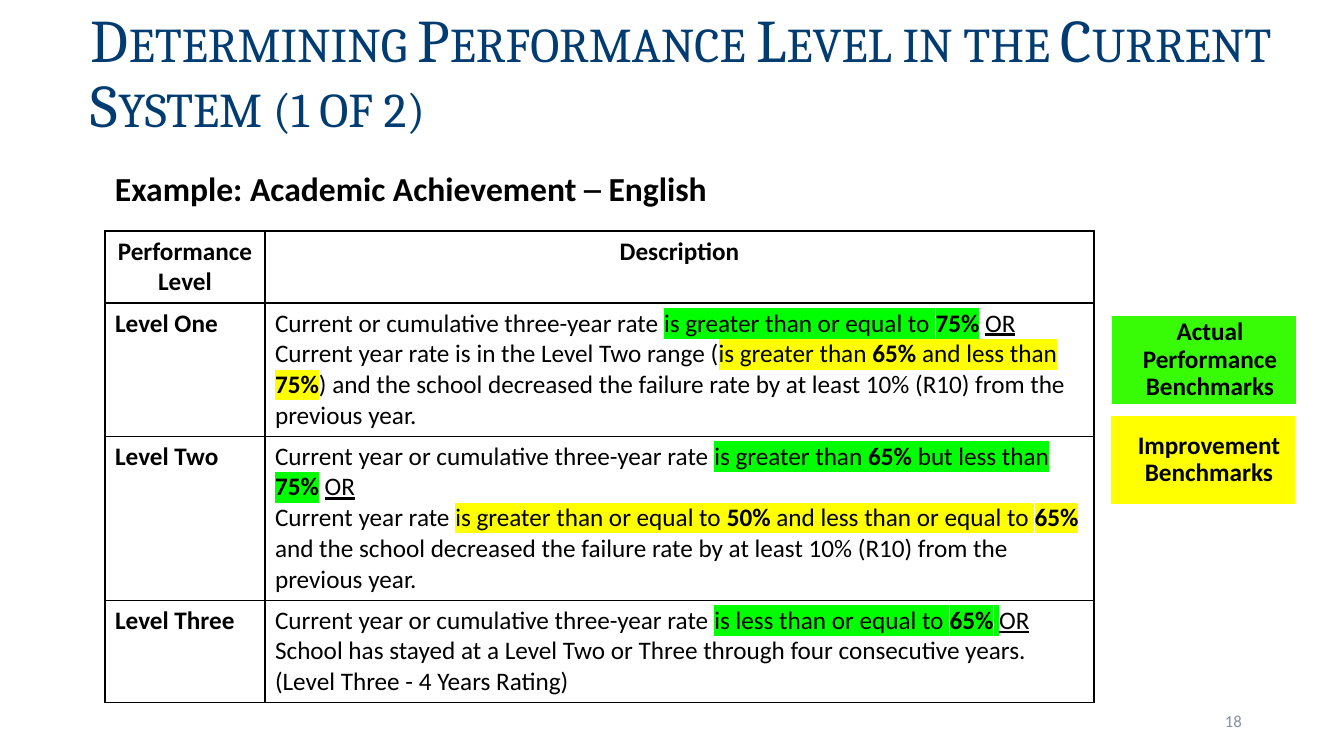
from typing import NamedTuple

from lxml.etree import SubElement
from pptx import Presentation
from pptx.dml.color import RGBColor
from pptx.enum.shapes import MSO_SHAPE
from pptx.enum.text import MSO_ANCHOR, MSO_AUTO_SIZE, PP_ALIGN
from pptx.oxml.ns import qn
from pptx.util import Pt

EMU_PER_PX = 914400 / 100.8
BLACK, NAVY, GREY, WHITE = "000000", "003C71", "888FA3", "FFFFFF"
GREEN, YELLOW, BOX_GREEN = "00FF00", "FFFF00", "37FC05"


class Span(NamedTuple):
    text: str
    bold: bool = False
    underline: bool = False
    highlight: str = ""


class Level(NamedTuple):
    name: str
    height: int
    criteria: list[list[Span]]


def px(length: int) -> int:
    return round(length * EMU_PER_PX)


def rgb(color: str) -> RGBColor:
    return RGBColor.from_string(color)


def place(shape, left: int, top: int, width: int, height: int) -> None:
    shape.left, shape.top, shape.width, shape.height = map(px, (left, top, width, height))


def style_run(run, size: float, color: str = BLACK, bold: bool = False, font: str = "Calibri") -> None:
    run.font.size, run.font.name, run.font.bold = Pt(size), font, bold
    run.font.color.rgb = rgb(color)


def prepare_frame(frame, anchor: MSO_ANCHOR) -> None:
    frame.word_wrap = True
    frame.auto_size = MSO_AUTO_SIZE.NONE
    frame.vertical_anchor = anchor


def add_span(paragraph, span: Span) -> None:
    run = paragraph.add_run()
    run.text = span.text
    style_run(run, 18, bold=span.bold)
    run.font.underline = span.underline
    if span.highlight:
        properties = run.font._element
        highlight = SubElement(properties, qn("a:highlight"))
        SubElement(highlight, qn("a:srgbClr"), val=span.highlight)
        properties.find(qn("a:solidFill")).addnext(highlight)


def fill_cell(cell, paragraphs: list[list[Span]], align: PP_ALIGN = PP_ALIGN.LEFT) -> None:
    properties = cell._tc.get_or_add_tcPr()
    for side in ("lnL", "lnR", "lnT", "lnB"):
        border = SubElement(properties, qn(f"a:{side}"), w=str(Pt(1)))
        SubElement(SubElement(border, qn("a:solidFill")), qn("a:srgbClr"), val=BLACK)
    cell.fill.solid()
    cell.fill.fore_color.rgb = rgb(WHITE)
    for index, spans in enumerate(paragraphs):
        paragraph = cell.text_frame.add_paragraph() if index else cell.text_frame.paragraphs[0]
        paragraph.alignment = align
        for span in spans:
            add_span(paragraph, span)


def format_benchmark(shape, text: str, color: str) -> None:
    shape.fill.solid()
    shape.fill.fore_color.rgb = rgb(color)
    shape.line.fill.background()
    prepare_frame(shape.text_frame, MSO_ANCHOR.MIDDLE)
    shape.text_frame.text = text
    paragraph = shape.text_frame.paragraphs[0]
    paragraph.alignment = PP_ALIGN.CENTER
    paragraph.line_spacing = 0.9
    paragraph.space_before = Pt(10)
    properties = paragraph._p.get_or_add_pPr()
    properties.set("marL", str(px(12)))
    properties.set("indent", "0")
    SubElement(properties, qn("a:buNone"))
    style_run(paragraph.runs[0], 18, bold=True)


def add_label(slide, box: tuple[int, int, int, int], text: str, size: int, color: str,
              bold: bool, align: PP_ALIGN, anchor: MSO_ANCHOR) -> None:
    label = slide.shapes.add_textbox(*map(px, box))
    prepare_frame(label.text_frame, anchor)
    label.text_frame.text = text
    paragraph = label.text_frame.paragraphs[0]
    paragraph.alignment = align
    style_run(paragraph.runs[0], size, color, bold)


OR = Span("OR", underline=True)
DECREASED = "and the school decreased the failure rate by at least 10% (R10) from the previous year."
CUMULATIVE = Span("Current year or cumulative three-year rate ")

LEVELS = [
    Level("Level One", 133, [
        [Span("Current or cumulative three-year rate "),
         Span("is greater than or equal to ", highlight=GREEN),
         Span("75%", bold=True, highlight=GREEN), Span(" ", bold=True), OR],
        [Span("Current year rate is in the Level Two range ("),
         Span("is greater than ", highlight=YELLOW),
         Span("65%", bold=True, highlight=YELLOW),
         Span(" and less than ", highlight=YELLOW),
         Span("75%", bold=True, highlight=YELLOW), Span(") " + DECREASED)],
    ]),
    Level("Level Two", 164, [
        [CUMULATIVE, Span("is greater than ", highlight=GREEN),
         Span("65%", bold=True, highlight=GREEN),
         Span(" but less than ", highlight=GREEN),
         Span("75%", bold=True, highlight=GREEN), Span(" ", bold=True), OR],
        [Span("Current year rate "),
         Span("is greater than or equal to ", highlight=YELLOW),
         Span("50%", bold=True, highlight=YELLOW),
         Span(" and less than or equal to ", highlight=YELLOW),
         Span("65%", bold=True, highlight=YELLOW), Span(" " + DECREASED)],
    ]),
    Level("Level Three", 102, [
        [CUMULATIVE, Span("is less than or equal to ", highlight=GREEN),
         Span("65%", bold=True, highlight=GREEN), Span(" ", highlight=GREEN), OR],
        [Span("School has stayed at a Level Two or Three through four consecutive years. "
              "(Level Three - 4 Years Rating)")],
    ]),
]


def add_levels(slide) -> None:
    heights = [72] + [level.height for level in LEVELS]
    levels = slide.shapes.add_table(
        len(heights), 2, px(105), px(231), px(989), px(sum(heights))).table
    levels.first_row = levels.horz_banding = False
    for column, width in zip(levels.columns, (160, 829)):
        column.width = px(width)
    for row, height in zip(levels.rows, heights):
        row.height = px(height)
    for column, heading in enumerate(("Performance Level", "Description")):
        fill_cell(levels.cell(0, column), [[Span(heading, bold=True)]], PP_ALIGN.CENTER)
    for row, level in enumerate(LEVELS, start=1):
        fill_cell(levels.cell(row, 0), [[Span(level.name, bold=True)]])
        fill_cell(levels.cell(row, 1), level.criteria)


def main() -> None:
    deck = Presentation()
    deck.slide_width, deck.slide_height = px(1344), px(756)
    slide = deck.slides.add_slide(deck.slide_layouts[1])

    # Title
    title = slide.shapes.title
    place(title, 0, 0, 1344, 146)
    prepare_frame(title.text_frame, MSO_ANCHOR.BOTTOM)
    title.text_frame.margin_left = px(91)
    title.text_frame.text = "Determining Performance Level in the Current System (1 of 2)"
    heading = title.text_frame.paragraphs[0]
    heading.alignment = PP_ALIGN.LEFT
    heading.line_spacing = 0.9
    style_run(heading.runs[0], 43.2, NAVY, font="Cambria")
    heading.runs[0].font._element.set("cap", "small")

    # Benchmark key
    actual = slide.placeholders[1]
    place(actual, 1112, 316, 184, 88)
    format_benchmark(actual, "Actual Performance Benchmarks", BOX_GREEN)
    improvement = slide.shapes.add_shape(
        MSO_SHAPE.RECTANGLE, px(1111), px(416), px(184), px(88))
    improvement.shadow.inherit = False
    format_benchmark(improvement, "Improvement Benchmarks", YELLOW)

    # Performance levels
    add_label(slide, (105, 163, 713, 50), "Example: Academic Achievement ─ English",
              24, BLACK, True, PP_ALIGN.LEFT, MSO_ANCHOR.TOP)
    add_levels(slide)

    # Slide number
    add_label(slide, (950, 701, 302, 40), "18", 12, GREY, False,
              PP_ALIGN.RIGHT, MSO_ANCHOR.MIDDLE)

    deck.save("out.pptx")


if __name__ == "__main__":
    main()
